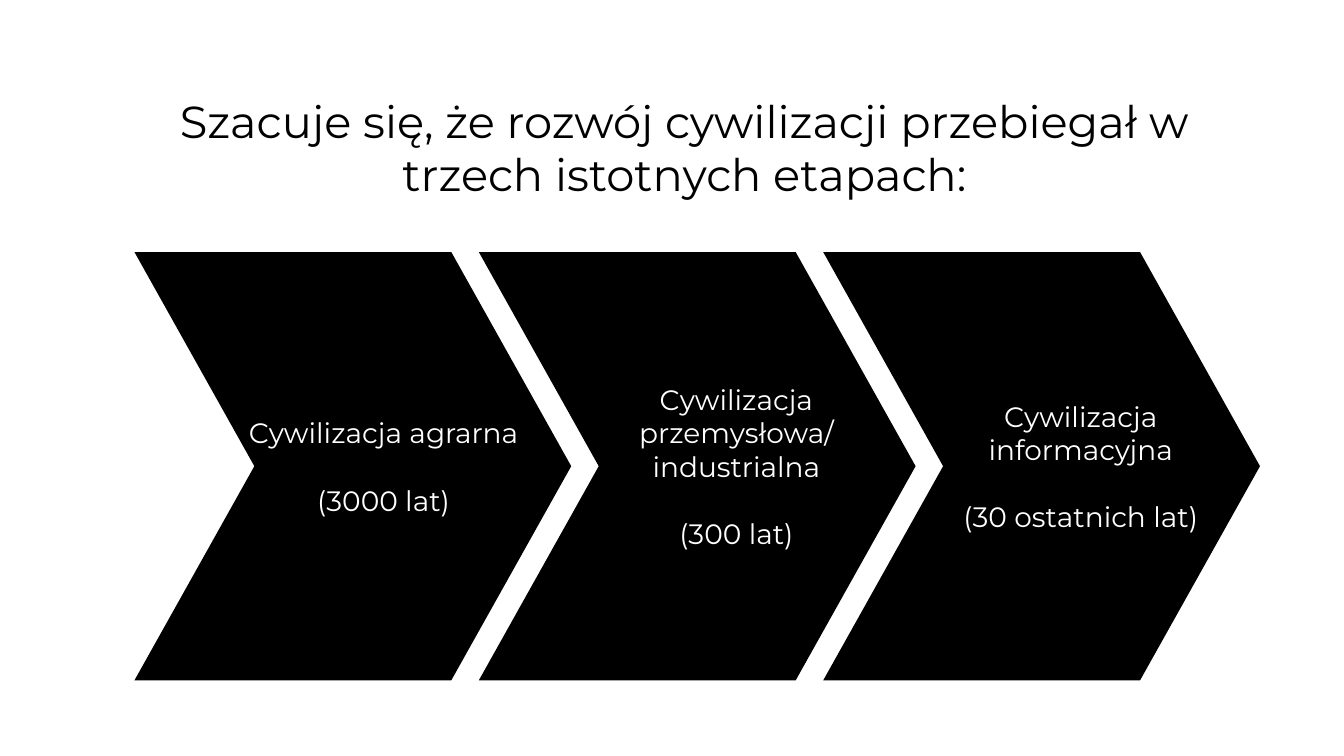
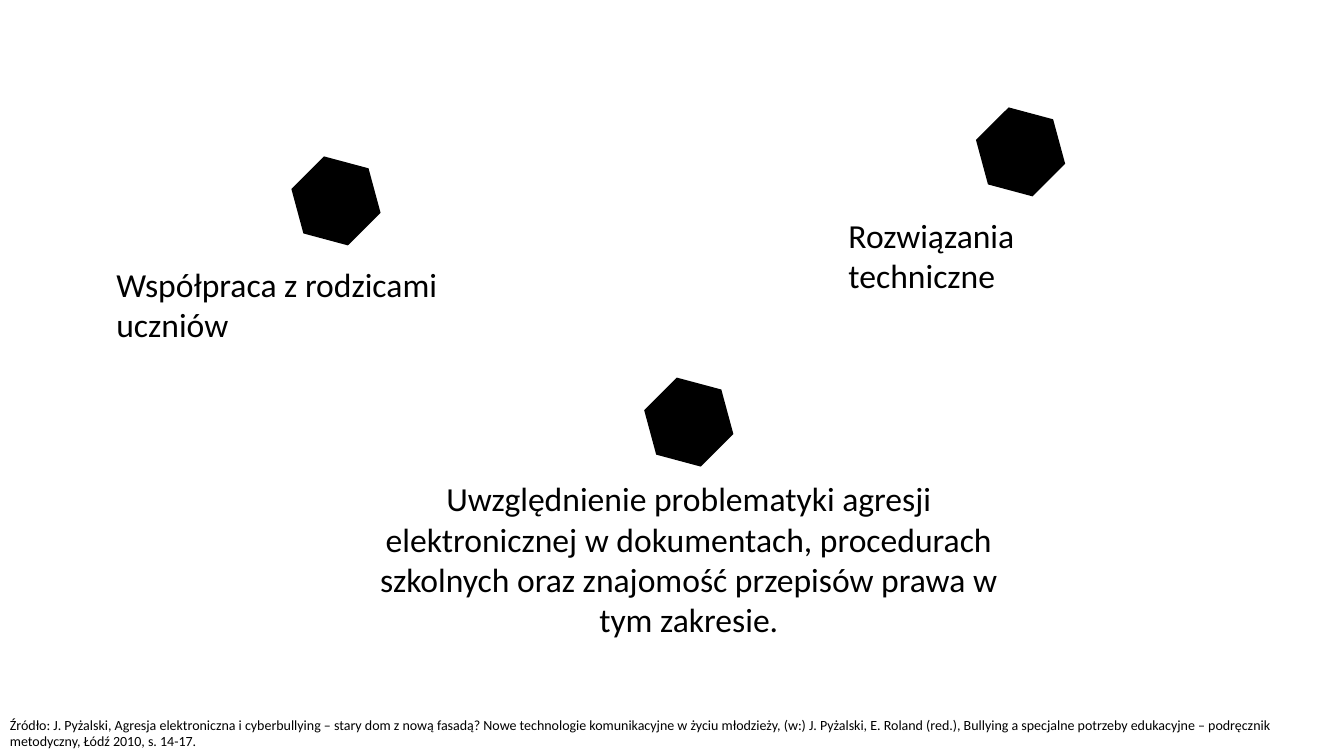
from dataclasses import dataclass

from pptx import Presentation
from pptx.dml.color import RGBColor
from pptx.enum.shapes import MSO_SHAPE
from pptx.enum.text import MSO_ANCHOR, MSO_AUTO_SIZE, PP_ALIGN
from pptx.util import Pt

CHEVRON = MSO_SHAPE.CHEVRON
HEXAGON = MSO_SHAPE.HEXAGON
LEFT = PP_ALIGN.LEFT
CENTER = PP_ALIGN.CENTER
TOP = MSO_ANCHOR.TOP
MIDDLE = MSO_ANCHOR.MIDDLE
NO_FIT = MSO_AUTO_SIZE.NONE

TITLE_ONLY, BLANK = 5, 6
SLIDE_WIDTH, SLIDE_HEIGHT = 960, 540


@dataclass(frozen=True)
class Theme:
    ink: RGBColor = RGBColor(0x00, 0x00, 0x00)
    paper: RGBColor = RGBColor(0xFF, 0xFF, 0xFF)
    display_font: str = "Montserrat"
    body_font: str = "Calibri"
    title_size: int = 32
    stage_size: int = 20
    caption_size: int = 24
    source_size: int = 10


THEME = Theme()


def write_text(frame, lines, font, size, color, align=LEFT, anchor=TOP, gap=0):
    """Fill a text frame with one paragraph per line, gap points apart."""
    frame.word_wrap = True
    frame.auto_size = NO_FIT
    frame.vertical_anchor = anchor
    for index, line in enumerate(lines):
        paragraph = frame.add_paragraph() if index else frame.paragraphs[0]
        paragraph.alignment = align
        paragraph.space_before = Pt(gap if index else 0)
        run = paragraph.add_run()
        run.text = line
        run.font.name = font
        run.font.size = Pt(size)
        run.font.color.rgb = color


def add_text(slide, box, lines, font, size, color, **style):
    text_box = slide.shapes.add_textbox(*map(Pt, box))
    write_text(text_box.text_frame, lines, font, size, color, **style)


def add_solid(slide, kind, box, adjustment, rotation=0):
    shape = slide.shapes.add_shape(kind, *map(Pt, box))
    shape.adjustments[0] = adjustment
    shape.rotation = rotation
    shape.shadow.inherit = False
    shape.fill.solid()
    shape.fill.fore_color.rgb = THEME.ink
    shape.line.fill.background()


def place_title(slide, box, text):
    title = slide.shapes.title
    title.left, title.top, title.width, title.height = map(Pt, box)
    write_text(title.text_frame, [text], THEME.display_font, THEME.title_size,
               THEME.ink, align=CENTER)


def add_stages(slide, box, stages):
    """Nested chevrons across the box, each with its label on top."""
    left, top, width, height = box
    chevron_width = 312
    pitch = (width - chevron_width) / (len(stages) - 1)
    lefts = [left + index * pitch for index in range(len(stages))]
    for chevron_left in lefts:
        add_solid(slide, CHEVRON, (chevron_left, top, chevron_width, height), 0.28)
    for chevron_left, (inset, name, duration) in zip(lefts, stages):
        add_text(slide, (chevron_left + inset, top, 212, height), [name, duration],
                 THEME.display_font, THEME.stage_size, THEME.paper,
                 align=CENTER, anchor=MIDDLE, gap=24)


def add_measure(slide, box, hexagon_center, rise, text, align):
    """A tilted hexagon standing above its caption box."""
    hexagon_width, hexagon_height = 66, 57
    hexagon_left = hexagon_center - hexagon_width / 2
    add_solid(slide, HEXAGON,
              (hexagon_left, box[1] - rise, hexagon_width, hexagon_height),
              0.29, rotation=15)
    add_text(slide, box, [text], THEME.body_font, THEME.caption_size, THEME.ink,
             align=align)


def add_source(slide, box, text):
    add_text(slide, box, [text], THEME.body_font, THEME.source_size, THEME.ink)


def build_stages_slide(presentation):
    slide = presentation.slides.add_slide(presentation.slide_layouts[TITLE_ONLY])
    place_title(slide, (120, 63, 738, 94),
                "Szacuje się, że rozwój cywilizacji przebiegał w trzech istotnych etapach:")
    # Label inset, stage name, duration
    add_stages(slide, (96, 180, 804, 306), [
        (72, "Cywilizacja agrarna", "(3000 lat)"),
        (78, "Cywilizacja przemysłowa/ industrialna", "(300 lat)"),
        (78, "Cywilizacja informacyjna", "(30 ostatnich lat)"),
    ])


def build_measures_slide(presentation):
    slide = presentation.slides.add_slide(presentation.slide_layouts[BLANK])
    # Caption box, hexagon centre, hexagon rise, caption, alignment
    measures = [
        ((76, 185, 270, 68), 240, 70, "Współpraca z rodzicami uczniów", LEFT),
        ((599, 150, 190, 68), 729, 70, "Rozwiązania techniczne", LEFT),
        ((252, 338, 480, 124), 492, 65,
         "Uwzględnienie problematyki agresji elektronicznej w dokumentach, "
         "procedurach szkolnych oraz znajomość przepisów prawa w tym zakresie.",
         CENTER),
    ]
    for measure in measures:
        add_measure(slide, *measure)
    # Source line along the bottom edge
    add_source(slide, (0, SLIDE_HEIGHT - 32, SLIDE_WIDTH, 32),
               "Źródło: J. Pyżalski, Agresja elektroniczna i cyberbullying – stary dom "
               "z nową fasadą? Nowe technologie komunikacyjne w życiu młodzieży, (w:) "
               "J. Pyżalski, E. Roland (red.), Bullying a specjalne potrzeby edukacyjne – "
               "podręcznik metodyczny, Łódź 2010, s. 14-17.")


def main():
    presentation = Presentation()
    presentation.slide_width = Pt(SLIDE_WIDTH)
    presentation.slide_height = Pt(SLIDE_HEIGHT)
    build_stages_slide(presentation)
    build_measures_slide(presentation)
    presentation.save("out.pptx")


if __name__ == "__main__":
    main()
